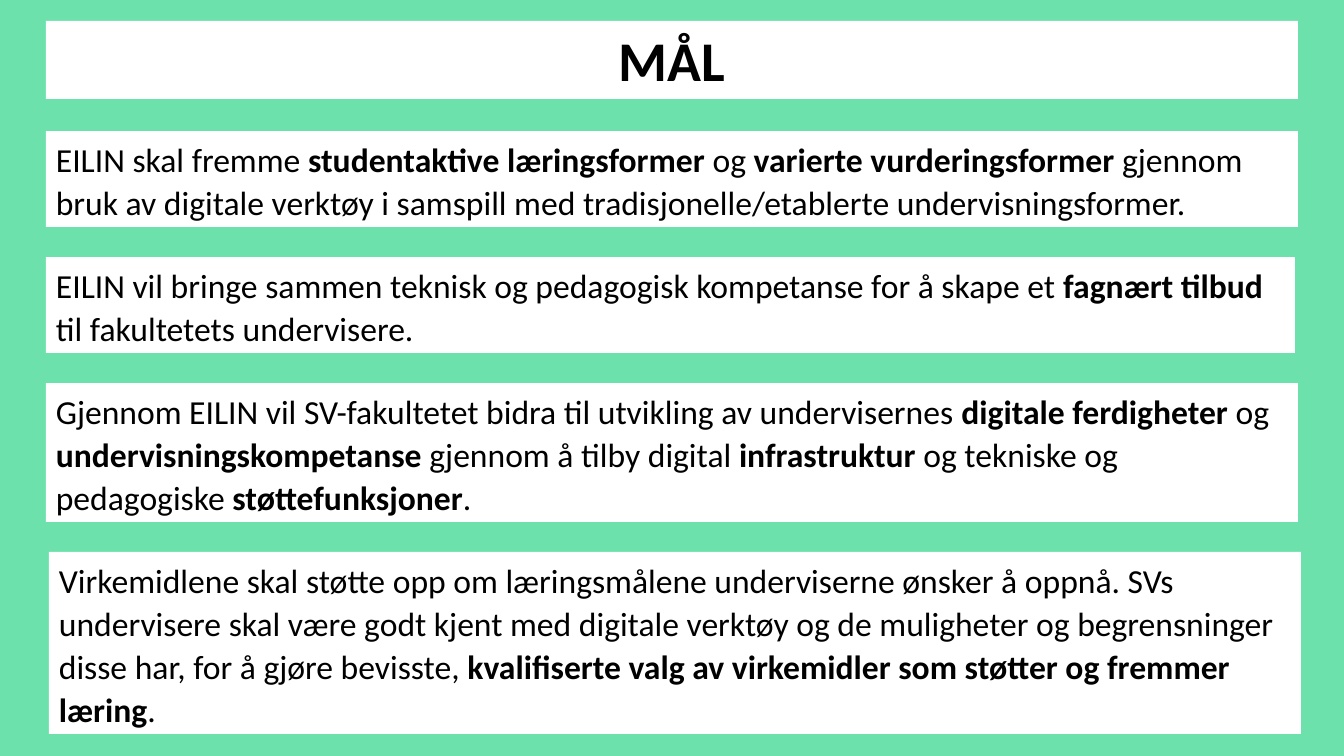
from pptx import Presentation
from pptx.dml.color import RGBColor
from pptx.enum.text import MSO_ANCHOR, MSO_AUTO_SIZE, PP_ALIGN
from pptx.util import Emu, Pt

PX = 914400 / 100.8
COLORS = {"background": "6CE1AB", "panel": "FFFFFF", "text": "000000"}
FONT = "Calibri"

TITLE_BOX = (46, 21, 1252, 78)
GOALS = [
    ((46, 131, 1252, 96),
     "EILIN skal fremme *studentaktive læringsformer *og *varierte vurderingsformer *"
     "gjennom bruk av digitale verktøy i samspill med tradisjonelle/etablerte "
     "undervisningsformer."),
    ((46, 257, 1249, 96),
     "EILIN vil bringe sammen teknisk og pedagogisk kompetanse for å skape et "
     "*fagnært tilbud *til fakultetets undervisere."),
    ((46, 383, 1252, 139),
     "Gjennom EILIN vil SV-fakultetet bidra til utvikling av undervisernes "
     "*digitale ferdigheter *og *undervisningskompetanse* gjennom å tilby digital "
     "*infrastruktur* og tekniske og pedagogiske *støttefunksjoner*."),
    ((49, 552, 1252, 182),
     "Virkemidlene skal støtte opp om læringsmålene underviserne ønsker å oppnå. SVs "
     "undervisere skal være godt kjent med digitale verktøy og de muligheter og "
     "begrensninger disse har, for å gjøre bevisste, *kvalifiserte valg av virkemidler "
     "som støtter og fremmer læring*."),
]


def px(n):
    return Emu(round(n * PX))


def rgb(name):
    return RGBColor.from_string(COLORS[name])


def write(tf, text, size, align=PP_ALIGN.LEFT, line_spacing=None, space_after=None):
    """Fill the frame with one paragraph; words between asterisks are bold."""
    p = tf.paragraphs[0]
    p.alignment = align
    p.line_spacing = line_spacing
    p.space_after = space_after
    for i, part in enumerate(text.split("*")):
        if part:
            r = p.add_run()
            r.text = part
            r.font.name = FONT
            r.font.size = Pt(size)
            r.font.bold = i % 2 == 1
            r.font.color.rgb = rgb("text")


def add_panel(s, box, text, **text_format):
    sp = s.shapes.add_textbox(*map(px, box))
    sp.fill.solid()
    sp.fill.fore_color.rgb = rgb("panel")
    tf = sp.text_frame
    tf.word_wrap = True
    tf.auto_size = MSO_AUTO_SIZE.SHAPE_TO_FIT_TEXT
    tf.vertical_anchor = MSO_ANCHOR.TOP
    write(tf, text, **text_format)


def add_goals_slide(prs):
    s = prs.slides.add_slide(prs.slide_layouts[6])
    s.background.fill.solid()
    s.background.fill.fore_color.rgb = rgb("background")
    add_panel(s, TITLE_BOX, "*MÅL*", size=40, align=PP_ALIGN.CENTER)
    for box, goal in GOALS:
        add_panel(s, box, goal, size=24, line_spacing=1.07, space_after=Pt(8))


def main():
    prs = Presentation()
    prs.slide_width, prs.slide_height = px(1344), px(756)
    add_goals_slide(prs)
    prs.save("out.pptx")


if __name__ == "__main__":
    main()
